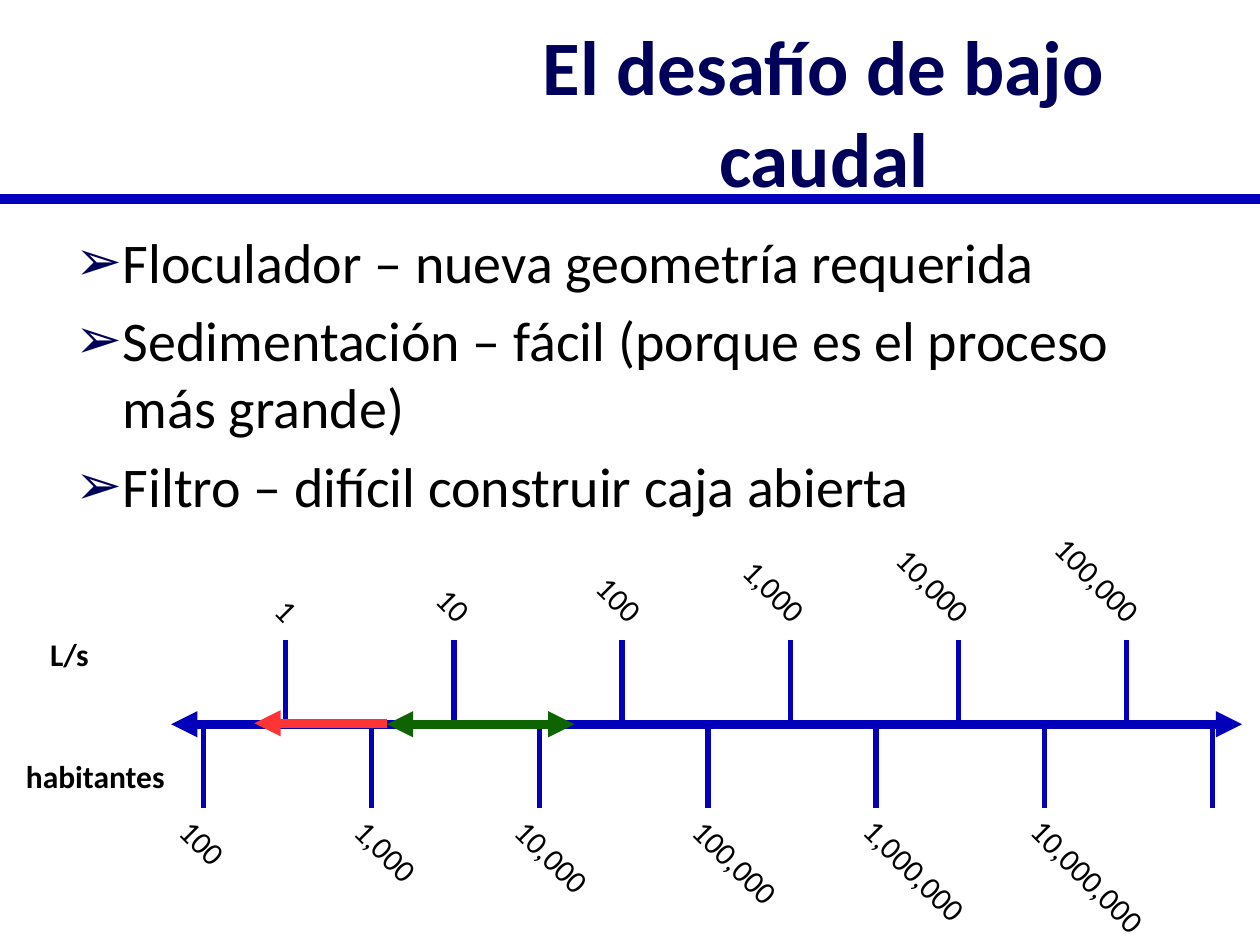
from lxml.etree import SubElement
from pptx import Presentation
from pptx.dml.color import RGBColor
from pptx.enum.shapes import MSO_CONNECTOR
from pptx.enum.text import MSO_ANCHOR, MSO_AUTO_SIZE, PP_ALIGN
from pptx.oxml.ns import qn
from pptx.util import Cm, Pt

NAVY = RGBColor(0x00, 0x00, 0x5A)
RULE_BLUE = RGBColor(0x03, 0x00, 0xBE)
BLUE = RGBColor(0x03, 0x00, 0xBA)
GREEN = RGBColor(0x0E, 0x64, 0x00)
RED = RGBColor(0xFF, 0x34, 0x34)
BLACK = RGBColor(0x00, 0x00, 0x00)

prs = Presentation()
prs.slide_width, prs.slide_height = Cm(25.4), Cm(19.05)
slide = prs.slides.add_slide(prs.slide_layouts[1])


def add_line(x1, y1, x2, y2, color, width, arrows=()):
    line = slide.shapes.add_connector(
        MSO_CONNECTOR.STRAIGHT, Cm(x1), Cm(y1), Cm(x2), Cm(y2))
    line.line.color.rgb = color
    line.line.width = Pt(width)
    for arrow in arrows:
        SubElement(line.line._get_or_add_ln(), qn(f"a:{arrow}"), type="triangle")
    SubElement(line._element.spPr, qn("a:effectLst"))


def add_label(text, center_x, center_y, width, align, rotation=0, bold=False):
    label = slide.shapes.add_textbox(
        Cm(center_x - width / 2), Cm(center_y - 0.51), Cm(width), Cm(1.02))
    label.rotation = rotation
    frame = label.text_frame
    frame.word_wrap = False
    frame.auto_size = MSO_AUTO_SIZE.SHAPE_TO_FIT_TEXT
    frame.text = text
    paragraph = frame.paragraphs[0]
    paragraph.alignment = align
    font = paragraph.runs[0].font
    font.name, font.size, font.bold = "Calibri", Pt(18), bold
    font.color.rgb = BLACK


add_line(0, 4.01, 25.4, 4.01, RULE_BLUE, 6)

title = slide.shapes.title
title.left, title.top, title.width, title.height = Cm(8.46), Cm(0.64), Cm(16.3), Cm(3.18)
title.text_frame.text = "El desafío de bajo caudal"
title.text_frame.auto_size = MSO_AUTO_SIZE.NONE
title.text_frame.vertical_anchor = MSO_ANCHOR.MIDDLE
heading = title.text_frame.paragraphs[0]
heading.alignment = PP_ALIGN.CENTER
heading_font = heading.runs[0].font
heading_font.name, heading_font.size, heading_font.bold = "Calibri", Pt(44), True
heading_font.color.rgb = NAVY

processes = slide.placeholders[1]
processes.left, processes.top = Cm(1.27), Cm(4.45)
processes.width, processes.height = Cm(22.86), Cm(12.57)
processes.text_frame.text = "\n".join([
    "Floculador – nueva geometría requerida",
    "Sedimentación – fácil (porque es el proceso más grande)",
    "Filtro – difícil construir caja abierta",
])
processes.text_frame.auto_size = MSO_AUTO_SIZE.NONE
for index, process in enumerate(processes.text_frame.paragraphs):
    process.space_before = Pt(6.4 if index else 0)
    properties = process._p.get_or_add_pPr()
    properties.set("marL", str(Cm(0.95)))
    properties.set("indent", str(Cm(-0.95)))
    bullet_color = SubElement(properties, qn("a:buClr"))
    SubElement(bullet_color, qn("a:srgbClr"), val=str(NAVY))
    SubElement(properties, qn("a:buChar"), char="➢")
    process_font = process.runs[0].font
    process_font.name, process_font.size = "Calibri", Pt(32)
    process_font.color.rgb = BLACK

axis_y, tick_length, decade = 14.6, 1.69, 3.39
for first_x, count, direction in [(5.76, 6, -1), (4.1, 7, 1)]:
    for index in range(count):
        tick_x = first_x + index * decade
        add_line(tick_x, axis_y, tick_x, axis_y + direction * tick_length, BLUE, 3)

both_ends = ("headEnd", "tailEnd")
add_line(3.45, axis_y, 25.04, axis_y, BLUE, 5, both_ends)
add_line(7.8, axis_y, 11.58, axis_y, GREEN, 5, both_ends)
add_line(5.13, axis_y - 0.02, 7.8, axis_y - 0.02, RED, 5, ("headEnd",))

flows = [(1, 5.78), (10, 9.14), (100, 12.48),
         (1000, 15.6), (10000, 18.8), (100000, 22.11)]
inhabitants = [(100, 4.1), (1000, 7.8), (10000, 11.15),
               (100000, 14.85), (1000000, 18.47), (10000000, 21.96)]
for scale, end_y, direction, align in [
    (flows, 12.59, -1, PP_ALIGN.RIGHT),
    (inhabitants, 16.47, 1, PP_ALIGN.LEFT),
]:
    for value, center_x in scale:
        text = f"{value:,}"
        commas = text.count(",")
        width = 0.51 + 0.33 * (len(text) - commas) + 0.16 * commas
        center_y = end_y + direction * 0.35 * width
        add_label(text, center_x, center_y, width, align, rotation=45)

add_label("L/s", 1.41, 13.18, 1.3, PP_ALIGN.LEFT, bold=True)
add_label("habitantes", 1.94, 15.65, 3.33, PP_ALIGN.LEFT, bold=True)

prs.save("out.pptx")
